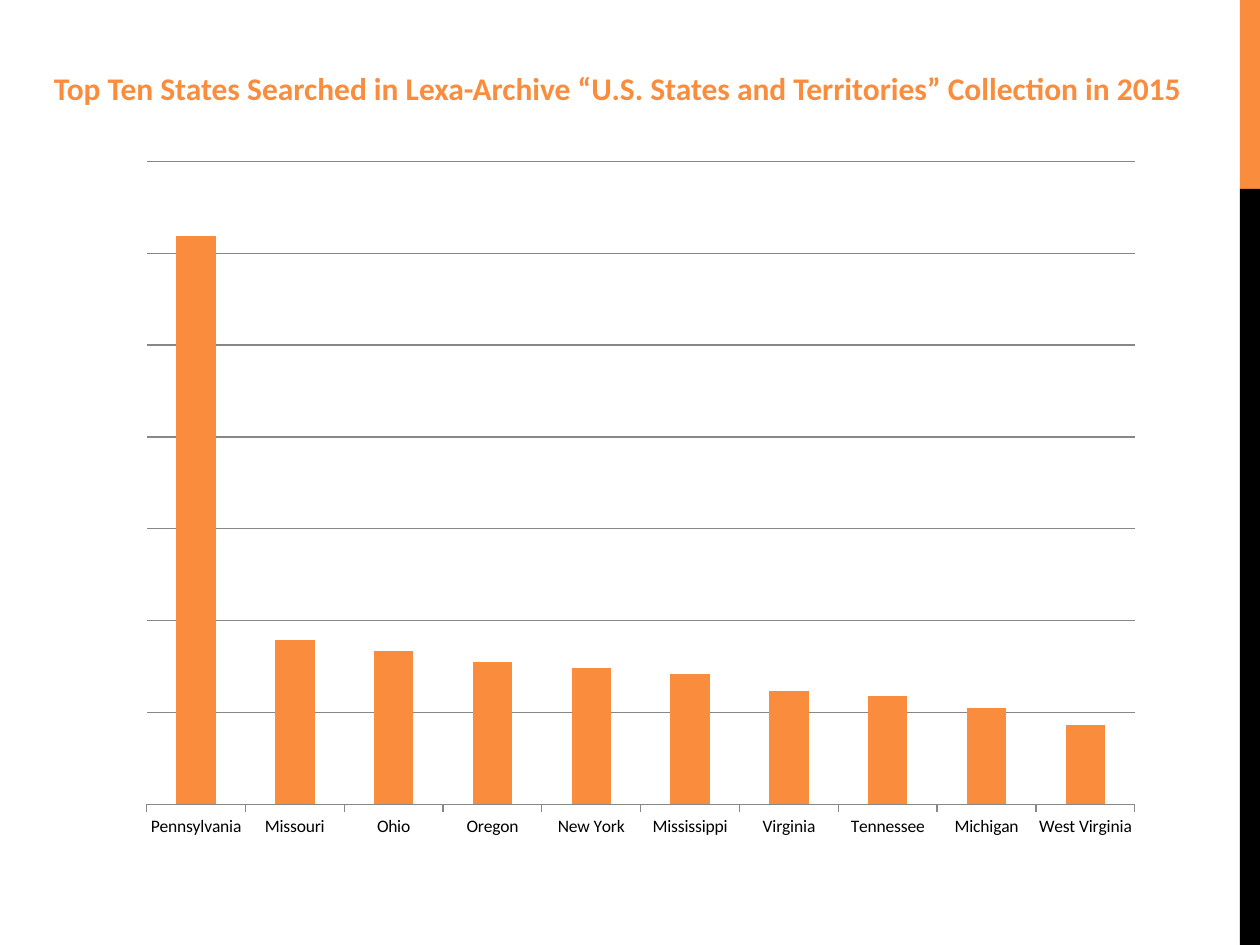
from pptx import Presentation
from pptx.chart.data import CategoryChartData
from pptx.dml.color import RGBColor as RGB
from pptx.enum.chart import XL_CHART_TYPE as ChartType, XL_TICK_MARK as Tick
from pptx.enum.shapes import MSO_SHAPE as Shape
from pptx.util import Inches, Pt

# Content
TITLE = "Top Ten States Searched in Lexa-Archive “U.S. States and Territories” Collection in 2015"
SEARCHES = {
    "Pennsylvania": 100, "Missouri": 29, "Ohio": 27, "Oregon": 25,
    "New York": 24, "Mississippi": 23, "Virginia": 20, "Tennessee": 19,
    "Michigan": 17, "West Virginia": 14,
}
GRID_STEP, GRID_COUNT = 16.17, 7

THEME = {
    "font": "Calibri", "title_size": Pt(18), "label_size": Pt(10),
    "accent": RGB(0xFA, 0x8D, 0x3D), "black": RGB(0, 0, 0),
    "grid": RGB(0x87, 0x87, 0x87),
}
SIDEBAR = [(1.5, THEME["accent"]), (6, THEME["black"])]  # height, colour
SIDEBAR_LEFT, SIDEBAR_WIDTH = 9.84, 0.16


def set_font(font, size, color, bold=False):
    font.name, font.size, font.bold = THEME["font"], size, bold
    font.color.rgb = color


def add_text(slide, box, text, *, size, color, bold=False):
    frame = slide.shapes.add_textbox(*map(Inches, box)).text_frame
    frame.word_wrap = True
    run = frame.paragraphs[0].add_run()
    run.text = text
    set_font(run.font, size, color, bold)


def style_line(line):
    line.color.rgb = THEME["grid"]
    line.width = Pt(0.75)


prs = Presentation()
prs.slide_width, prs.slide_height = Inches(10), Inches(7.5)
slide = prs.slides.add_slide(prs.slide_layouts[6])

# Sidebar bands, stacked from the top
top = 0
for height, color in SIDEBAR:
    band = slide.shapes.add_shape(
        Shape.RECTANGLE, *map(Inches, (SIDEBAR_LEFT, top, SIDEBAR_WIDTH, height)))
    band.shadow.inherit = False
    band.fill.solid()
    band.fill.fore_color.rgb = color
    band.line.fill.background()
    top += height

# Column chart of searches by state
searches = CategoryChartData()
searches.categories = list(SEARCHES)
searches.add_series("Series 1", list(SEARCHES.values()))
chart = slide.shapes.add_chart(
    ChartType.COLUMN_CLUSTERED, *map(Inches, (1, 1.17, 8.17, 5.58)), searches).chart
chart.has_legend = chart.has_title = False
set_font(chart.font, THEME["label_size"], THEME["black"])

plot = chart.plots[0]
plot.gap_width = 150
plot.vary_by_categories = False
columns = plot.series[0].format.fill
columns.solid()
columns.fore_color.rgb = THEME["accent"]

states = chart.category_axis
states.major_tick_mark = Tick.OUTSIDE
style_line(states.format.line)

counts = chart.value_axis
counts.visible = False
counts.minimum_scale = 0
counts.maximum_scale = GRID_STEP * GRID_COUNT
counts.major_unit = GRID_STEP
counts.has_major_gridlines = True
style_line(counts.major_gridlines.format.line)

# Title
add_text(slide, (0.33, 0.5, 9.33, 0.71), TITLE,
         size=THEME["title_size"], color=THEME["accent"], bold=True)

prs.save("out.pptx")
